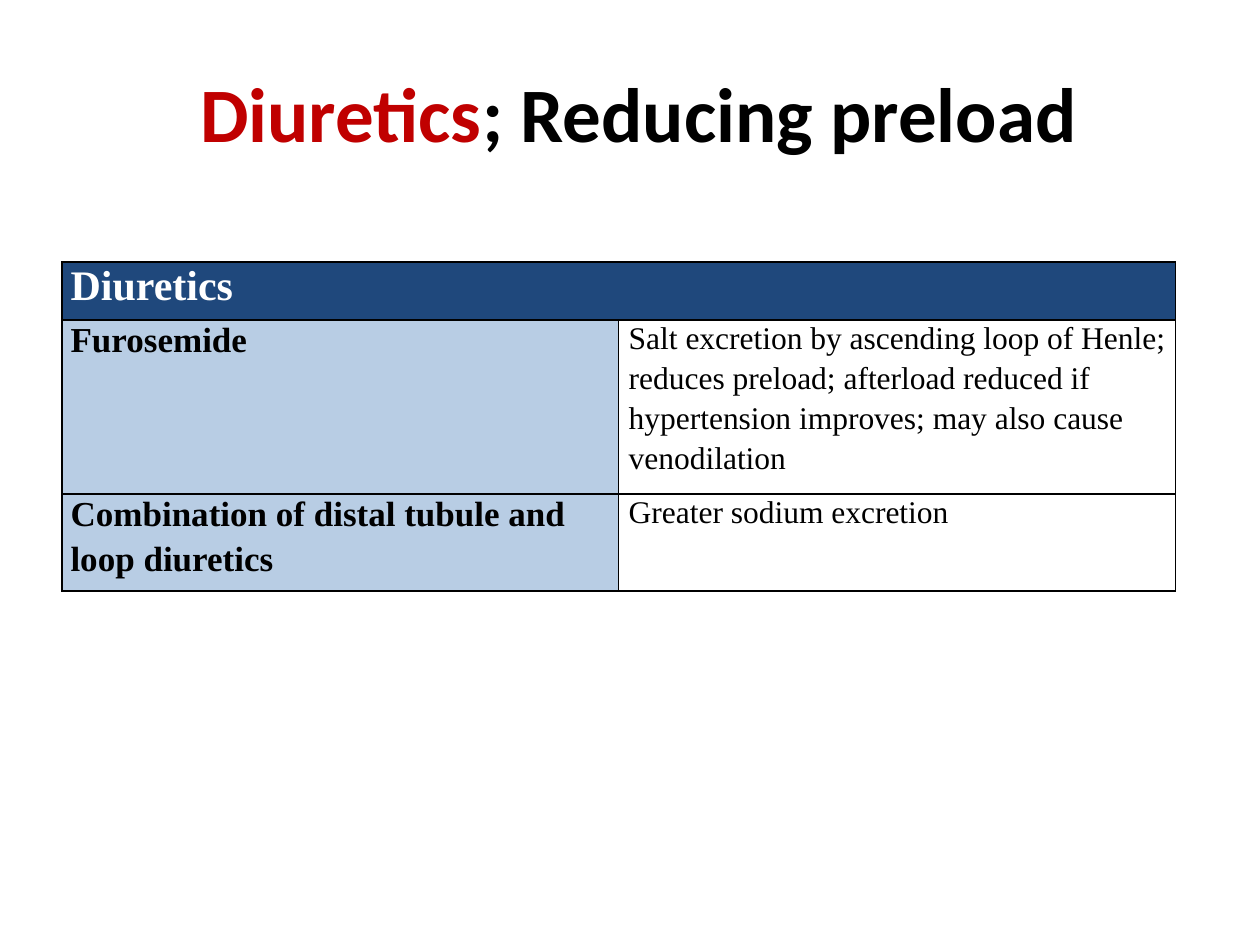
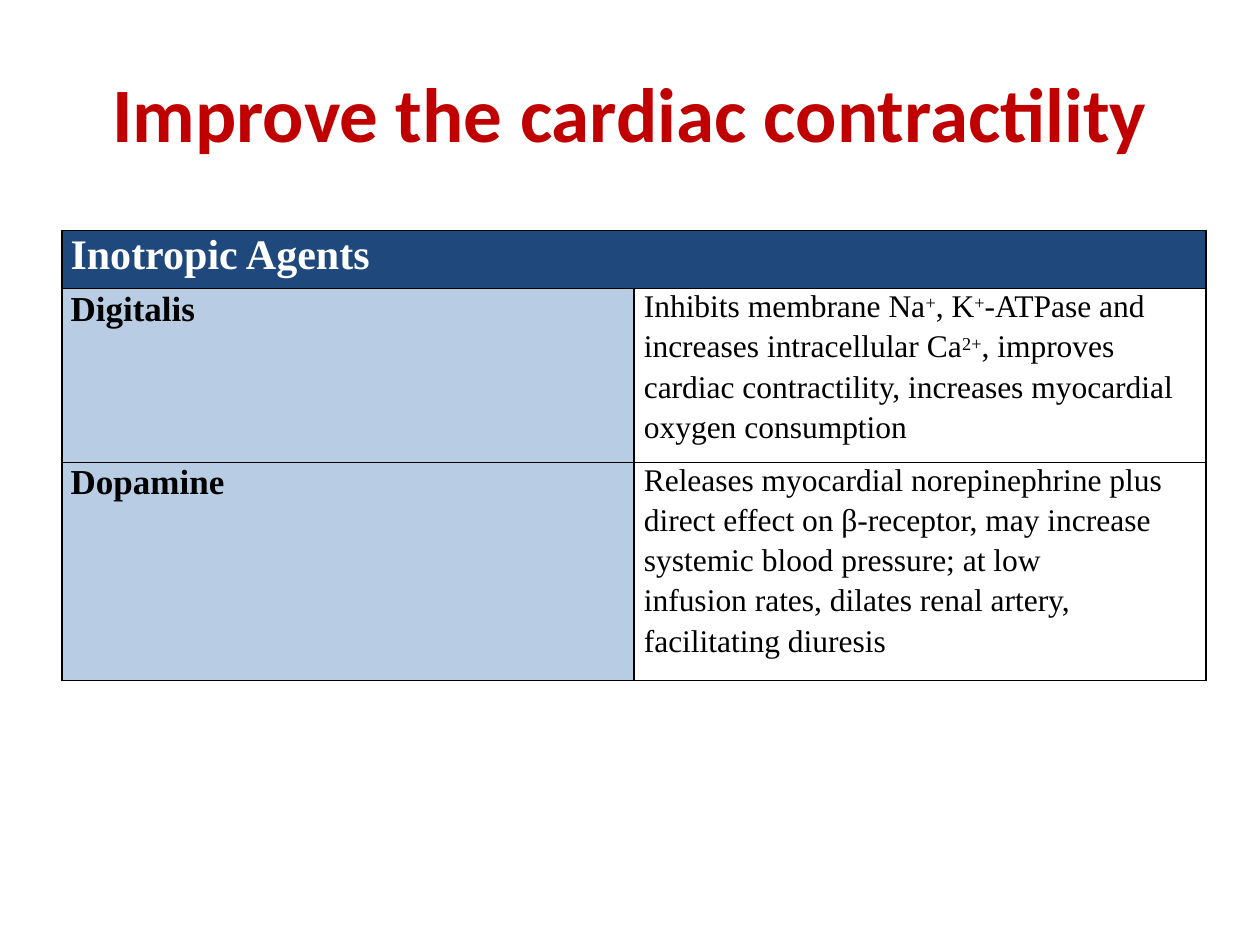
"""Build two slides that list heart failure drugs and their effects."""
import dataclasses

import lxml.etree
import pptx
import pptx.dml.color
import pptx.enum.text
import pptx.oxml.ns
import pptx.util

Inches = pptx.util.Inches
Pt = pptx.util.Pt


@dataclasses.dataclass(frozen=True)
class Theme:
    """Colours, fonts and type sizes shared by the slides."""
    red: str = "C00000"
    black: str = "000000"
    white: str = "FFFFFF"
    navy: str = "1F487C"
    pale_blue: str = "B8CDE4"
    title_font: str = "Calibri"
    table_font: str = "Times New Roman"
    title_size: int = 44
    header_size: int = 24
    drug_size: int = 20
    effect_size: int = 18
    border_width: int = 1
    inset: float = 0.01


THEME = Theme()


def rgb(color):
    """Turn a hex string into a colour."""
    return pptx.dml.color.RGBColor.from_string(color)


def add_run(paragraph, text, font, size, color, bold):
    """Add one formatted run and return it."""
    run = paragraph.add_run()
    run.text = text
    run.font.name = font
    run.font.size = Pt(size)
    run.font.color.rgb = rgb(color)
    run.font.bold = bold
    return run


def set_insets(box, left):
    """Set the inner margins of a cell or text frame."""
    box.margin_left = Inches(left)
    box.margin_top = Inches(THEME.inset)
    box.margin_right = box.margin_bottom = 0


def add_title(slide, left, top, width, parts):
    """Add a title made of (text, colour) parts."""
    shape = slide.shapes.add_textbox(Inches(left), Inches(top), Inches(width), Inches(0.76))
    frame = shape.text_frame
    frame.word_wrap = True
    frame.auto_size = pptx.enum.text.MSO_AUTO_SIZE.SHAPE_TO_FIT_TEXT
    set_insets(frame, THEME.inset)
    paragraph = frame.paragraphs[0]
    paragraph.space_before = Pt(1.1)
    for text, color in parts:
        add_run(paragraph, text, THEME.title_font, THEME.title_size, color, True)


def add_marked_text(paragraph, text, size, color, bold):
    """Add runs, raising text between carets and breaking lines at newlines."""
    for line_number, line in enumerate(text.split("\n")):
        if line_number:
            paragraph.add_line_break()
        for index, part in enumerate(line.split("^")):
            run = add_run(paragraph, part, THEME.table_font, size, color, bold)
            if index % 2:
                run._r.get_or_add_rPr().set("baseline", "25000")


def style_cell(cell, fill, left_inset):
    """Give a cell its insets, black borders and fill."""
    set_insets(cell, left_inset)
    properties = cell._tc.get_or_add_tcPr()
    for side in ("a:lnL", "a:lnR", "a:lnT", "a:lnB"):
        line = lxml.etree.SubElement(properties, pptx.oxml.ns.qn(side), w=str(Pt(THEME.border_width)))
        solid = lxml.etree.SubElement(line, pptx.oxml.ns.qn("a:solidFill"))
        lxml.etree.SubElement(solid, pptx.oxml.ns.qn("a:srgbClr"), val=THEME.black)
    if fill:
        cell.fill.solid()
        cell.fill.fore_color.rgb = rgb(fill)
    else:
        cell.fill.background()


def fill_cell(cell, texts, size, color, bold, **following):
    """Write paragraphs; the keywords format those after the first."""
    frame = cell.text_frame
    for index, text in enumerate(texts):
        paragraph = frame.add_paragraph() if index else frame.paragraphs[0]
        if index:
            for name, value in following.items():
                setattr(paragraph, name, value)
        else:
            paragraph.space_before = Pt(0.8)
        add_marked_text(paragraph, text, size, color, bold)


def add_drug_table(slide, left, top, column_width, heights, header, drugs):
    """Add a table with a merged header over drug and effect columns."""
    frame = slide.shapes.add_table(len(heights), 2, Inches(left), Inches(top),
                                   Inches(2 * column_width), Inches(sum(heights)))
    table = frame.table
    table.first_row = table.horz_banding = False
    for column in table.columns:
        column.width = Inches(column_width)
    for row, height in zip(table.rows, heights):
        row.height = Inches(height)
    table.cell(0, 0).merge(table.cell(0, 1))
    for cell in table.rows[0].cells:
        style_cell(cell, THEME.navy, 0.07)
    fill_cell(table.cell(0, 0), [header], THEME.header_size, THEME.white, True)
    for row_number, (drug, effect) in enumerate(drugs, start=1):
        drug_cell, effect_cell = table.rows[row_number].cells
        style_cell(drug_cell, THEME.pale_blue, 0.07)
        fill_cell(drug_cell, drug, THEME.drug_size, THEME.black, True, space_before=Pt(3.6))
        style_cell(effect_cell, None, 0.08)
        fill_cell(effect_cell, effect, THEME.effect_size, THEME.black, False, line_spacing=1.15)


def build_diuretics_slide(slide):
    """Place the title and table about diuretics."""
    add_title(slide, 1.58, 0.51, 7, [("Diuretics", THEME.red), ("; Reducing preload", THEME.black)])
    add_drug_table(slide, 0.49, 2.08, 4.42, (0.46, 1.38, 0.77), "Diuretics", [
        (["Furosemide"],
         ["Salt excretion by ascending loop of Henle;",
          "reduces preload; afterload reduced if hypertension improves; may also cause venodilation"]),
        (["Combination of distal tubule and", "loop diuretics"],
         ["Greater sodium excretion"]),
    ])


def build_contractility_slide(slide):
    """Place the title and table about inotropic agents."""
    add_title(slide, 0.88, 0.51, 8.25, [("Improve the cardiac contractility", THEME.red)])
    add_drug_table(slide, 0.49, 1.83, 4.54, (0.46, 1.38, 1.73), "Inotropic Agents", [
        (["Digitalis"],
         ["Inhibits membrane Na^+^, K^+^-ATPase and",
          "increases intracellular Ca^2+^, improves cardiac contractility, "
          "increases myocardial oxygen consumption"]),
        (["Dopamine"],
         ["Releases myocardial norepinephrine plus",
          "direct effect on β-receptor, may increase systemic blood pressure; at low\n"
          "infusion rates, dilates renal artery, facilitating diuresis"]),
    ])


def main():
    """Create the presentation and save it."""
    presentation = pptx.Presentation()
    presentation.slide_width = Inches(10)
    presentation.slide_height = Inches(7.5)
    for build in (build_diuretics_slide, build_contractility_slide):
        build(presentation.slides.add_slide(presentation.slide_layouts[6]))
    presentation.save("out.pptx")


if __name__ == "__main__":
    main()
